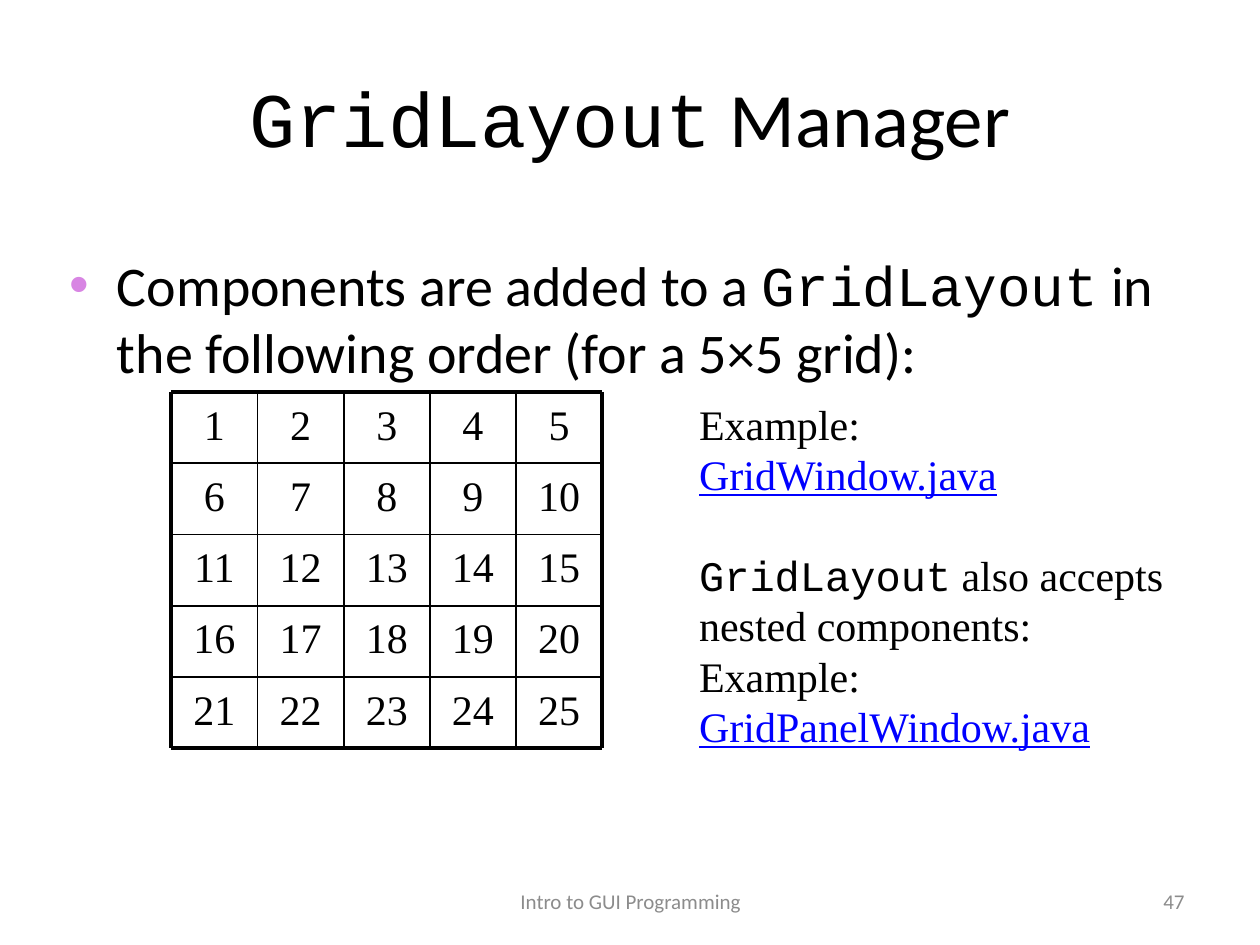
import pptx
import pptx.util
import pptx.dml.color
import pptx.enum.shapes
import pptx.enum.text
import pptx.oxml.ns
import lxml.etree

Inches = pptx.util.Inches
Pt = pptx.util.Pt
ALIGN = pptx.enum.text.PP_ALIGN
ANCHOR = pptx.enum.text.MSO_ANCHOR
STRAIGHT = pptx.enum.shapes.MSO_CONNECTOR.STRAIGHT
SANS, MONO, SERIF = "Calibri", "Courier New", "Times New Roman"
BLACK, BLUE, GRAY, PINK = "000000", "0000FF", "8C8C8C", "D885E3"


def color(code):
    """Turn a hex string into a colour."""
    return pptx.dml.color.RGBColor.from_string(code)


def node(parent, tag, **attrs):
    """Append a drawing element to a parent."""
    return lxml.etree.SubElement(parent, pptx.oxml.ns.qn(tag), attrs)


def add_run(para, text, face, size, code=BLACK, under=False):
    """Add one styled run to a paragraph."""
    run = para.add_run()
    run.text = text
    font = run.font
    font.name, font.size, font.underline = face, Pt(size), under
    font.color.rgb = color(code)


def add_box(owner, box, anchor=ANCHOR.TOP):
    """Add a wrapping text box and return its frame."""
    frame = owner.shapes.add_textbox(*map(Inches, box)).text_frame
    frame.word_wrap = True
    frame.vertical_anchor = anchor
    return frame


def add_title(slide, box):
    """Place the centred heading."""
    para = add_box(slide, box, ANCHOR.MIDDLE).paragraphs[0]
    para.alignment = ALIGN.CENTER
    add_run(para, "GridLayout", MONO, 44)
    add_run(para, " Manager", SANS, 44)


def add_point(slide, box):
    """Place the bulleted statement."""
    frame = add_box(slide, box)
    frame.margin_right = 0
    para = frame.paragraphs[0]
    para.space_before = Pt(6.4)
    props = para._p.get_or_add_pPr()
    indent = Inches(0.38)
    props.set("marL", str(indent))
    props.set("indent", str(-indent))
    node(node(props, "a:buClr"), "a:srgbClr", val=PINK)
    node(props, "a:buFont", typeface="Arial")
    node(props, "a:buChar", char="•")
    add_run(para, "Components are added to a ", SANS, 32)
    add_run(para, "GridLayout", MONO, 32)
    add_run(para, " in the following order (for a 5×5 grid):", SANS, 32)


def add_rule(owner, ends, width):
    """Draw one straight black line."""
    rule = owner.shapes.add_connector(STRAIGHT, *map(Inches, ends))
    rule.line.width = Pt(width)
    rule.line.color.rgb = color(BLACK)
    node(rule._element.spPr, "a:effectLst")


def add_grid(slide, box, count):
    """Place the grouped square grid of cells numbered by row."""
    left, top, wide, high = box
    right, base = left + wide, top + high
    step, drop = wide / count, high / count
    group = slide.shapes.add_group_shape()
    for index in range(count * count):
        row, col = divmod(index, count)
        cell = (left + col * step, top + row * drop, step, drop)
        para = add_box(group, cell).paragraphs[0]
        para.alignment = ALIGN.CENTER
        add_run(para, str(index + 1), SERIF, 24)
    for index in range(count + 1):
        width = 2.25 if index in (0, count) else 1
        across, down = left + index * step, top + index * drop
        add_rule(group, (left, down, right, down), width)
        add_rule(group, (across, top, across, base), width)


def add_sample(para, name):
    """Add an example label with its file name below."""
    add_run(para, "Example:", SERIF, 24)
    para.add_line_break()
    add_run(para, name, SERIF, 24, BLUE, True)


def add_notes(slide, box):
    """Place the examples beside the grid."""
    frame = add_box(slide, box)
    add_sample(frame.paragraphs[0], "GridWindow.java")
    para = frame.add_paragraph()
    para.space_before = Pt(28.8)
    add_run(para, "GridLayout", MONO, 24)
    add_run(para, " also accepts nested components:", SERIF, 24)
    add_sample(frame.add_paragraph(), "GridPanelWindow.java")


def add_foot(slide, box, text, align):
    """Place one footer text."""
    para = add_box(slide, box, ANCHOR.MIDDLE).paragraphs[0]
    para.alignment = align
    add_run(para, text, SANS, 12, GRAY)


def main():
    """Build and save the slide."""
    deck = pptx.Presentation()
    deck.slide_width, deck.slide_height = Inches(10), Inches(7.5)
    slide = deck.slides.add_slide(deck.slide_layouts[6])
    add_title(slide, (0.5, 0.3, 9, 1.25))
    add_grid(slide, (1.36, 3.11, 3.42, 2.83), 5)
    add_point(slide, (0.45, 1.94, 9.07, 1.21))
    add_notes(slide, (5.45, 3.11, 4.08, 2.93))
    add_foot(slide, (3.42, 6.95, 3.17, 0.4), "Intro to GUI Programming", ALIGN.CENTER)
    add_foot(slide, (7.17, 6.95, 2.33, 0.4), "47", ALIGN.RIGHT)
    deck.save("out.pptx")


if __name__ == "__main__":
    main()
